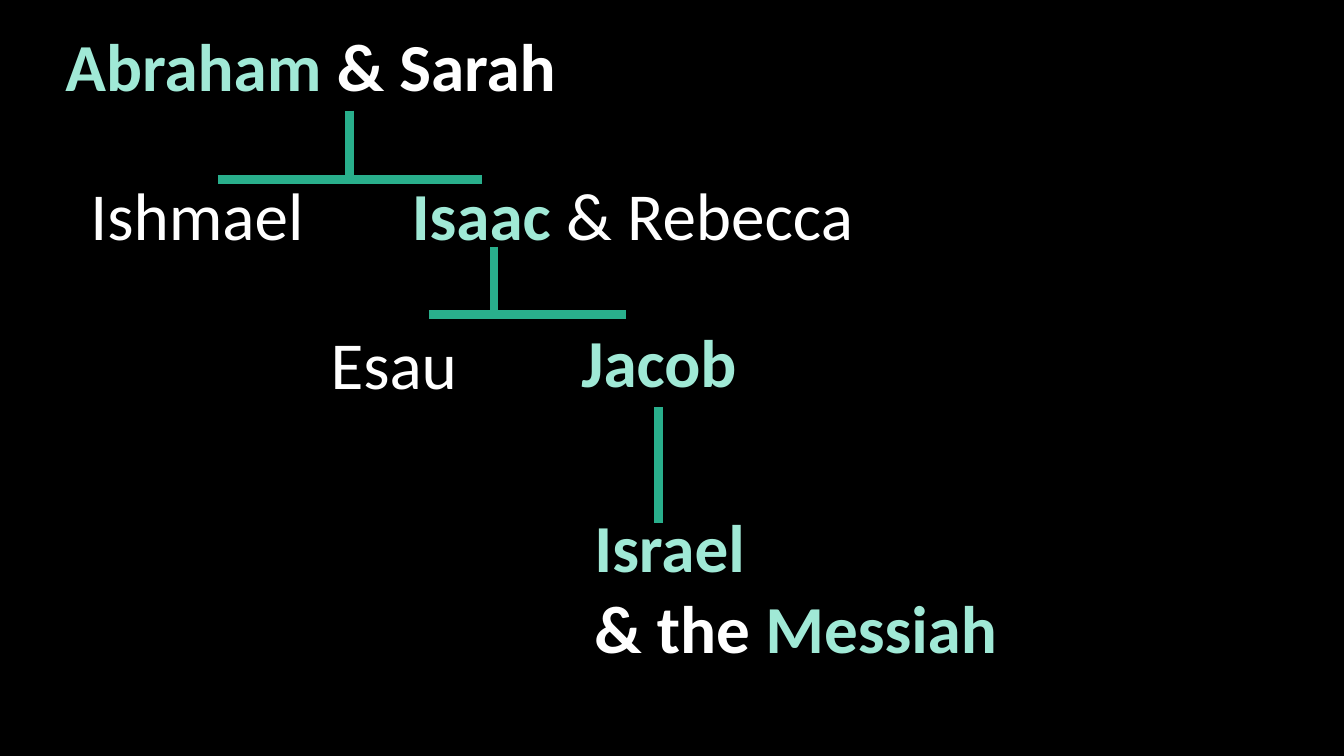
from lxml.etree import SubElement
from pptx import Presentation
from pptx.dml.color import RGBColor as Rgb
from pptx.enum.shapes import MSO_CONNECTOR as Link
from pptx.enum.text import MSO_AUTO_SIZE as AutoSize
from pptx.oxml.ns import qn
from pptx.util import Cm, Pt

COLORS = {"background": "000000", "promise": "A0E9D6", "plain": "FFFFFF", "branch": "29AF8C"}


class FamilyTree:
    name_format = {"name": "Calibri", "size": Pt(48)}
    branch_width = Pt(6)

    def __init__(self, slide):
        self.slide = slide
        fill = slide.background.fill
        fill.solid()
        fill.fore_color.rgb = Rgb.from_string(COLORS["background"])

    def names(self, left, top, width, height, lines):
        """Each line is a list of (words, colour, bold)."""
        box = self.slide.shapes.add_textbox(Cm(left), Cm(top), Cm(width), Cm(height))
        frame = box.text_frame
        frame.word_wrap = True
        frame.auto_size = AutoSize.SHAPE_TO_FIT_TEXT
        for index, line in enumerate(lines):
            paragraph = frame.add_paragraph() if index else frame.paragraphs[0]
            for words, color, bold in line:
                run = paragraph.add_run()
                run.text = words
                for key, value in {**self.name_format, "bold": bold}.items():
                    setattr(run.font, key, value)
                run.font.color.rgb = Rgb.from_string(COLORS[color])

    def branch(self, x1, y1, x2, y2):
        connector = self.slide.shapes.add_connector(
            Link.STRAIGHT, Cm(x1), Cm(y1), Cm(x2), Cm(y2))
        connector.line.color.rgb = Rgb.from_string(COLORS["branch"])
        connector.line.width = self.branch_width
        SubElement(connector.element.spPr, qn("a:effectLst"))

    def fork(self, stem, top, bottom, children):
        """A stem down from the parents and an arm towards each child."""
        self.branch(stem, top, stem, bottom)
        for child in children:
            self.branch(child, bottom, stem, bottom)


def main():
    prs = Presentation()
    prs.slide_width, prs.slide_height = Cm(33.87), Cm(19.05)
    tree = FamilyTree(prs.slides.add_slide(prs.slide_layouts[6]))

    # Generations
    row = 2.31
    tree.names(1.4, 0.48, 13.39, row,
               [[("Abraham", "promise", True), (" & Sarah", "plain", True)]])
    tree.names(2.03, 4.24, 6.32, row, [[("Ishmael", "plain", False)]])
    tree.names(10.13, 4.24, 13.59, row,
               [[("Isaac ", "promise", True), ("& Rebecca", "plain", False)]])
    tree.names(14.4, 7.95, 6.32, row, [[("Jacob", "promise", True)]])
    tree.names(8.08, 8, 6.32, row, [[("Esau", "plain", False)]])
    tree.names(14.73, 12.62, 19.13, 4.37,
               [[("Israel", "promise", True)],
                [("& the ", "plain", True), ("Messiah", "promise", True)]])

    # Lines of descent
    tree.fork(8.81, 2.79, 4.52, children=(12.14, 5.49))
    tree.fork(12.45, 6.22, 7.92, children=(15.77, 10.82))
    tree.branch(16.59, 10.26, 16.59, 13.18)

    prs.save("out.pptx")


if __name__ == "__main__":
    main()
